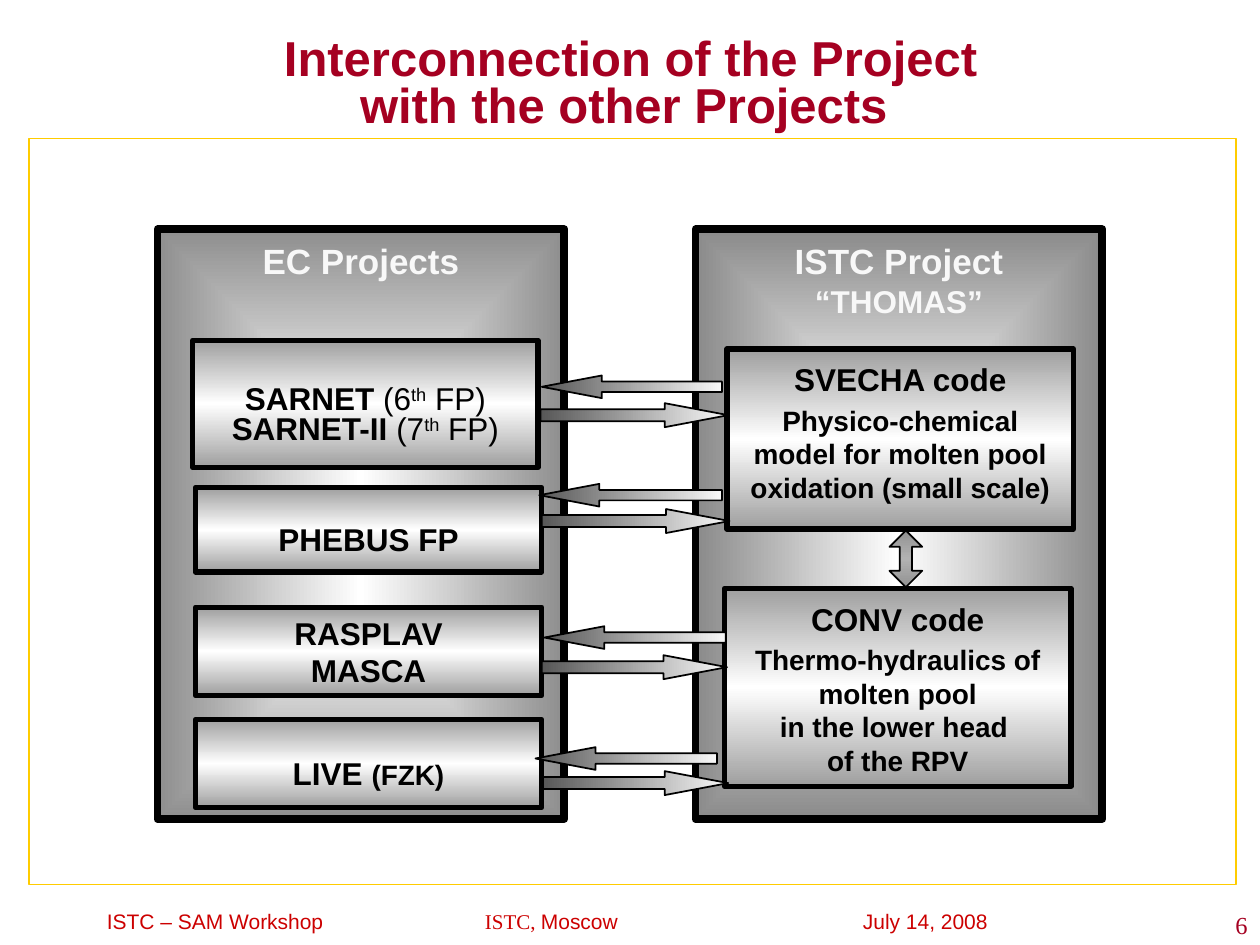
from lxml import etree
from pptx import Presentation
from pptx.dml.color import RGBColor
from pptx.enum.shapes import MSO_SHAPE
from pptx.enum.text import MSO_ANCHOR, PP_ALIGN
from pptx.oxml.ns import qn
from pptx.util import Inches, Pt

BLACK, PALE, DARK_RED, RED = "000000", "F8F8F8", "A50021", "CC0000"
BOX_SHADES = ["9F9F9F", "FFFFFF", "9F9F9F"]
TOP, MIDDLE = MSO_ANCHOR.TOP, MSO_ANCHOR.MIDDLE


def rgb(value):
    return RGBColor.from_string(value)


def add_shaded(kind, place, shades, line_width, angle=None):
    """Add an outlined shape with evenly spaced shades; no angle means from the centre out."""
    shape = slide.shapes.add_shape(kind, *map(Inches, place))
    shape.shadow.inherit = False
    shape.line.color.rgb = rgb(BLACK)
    shape.line.width = Pt(line_width)
    shape.fill.gradient()
    gradient = shape._element.spPr.find(qn("a:gradFill"))
    gradient.clear()
    gradient.set("rotWithShape", "1")
    stops = etree.SubElement(gradient, qn("a:gsLst"))
    for i, shade in enumerate(shades):
        stop = etree.SubElement(stops, qn("a:gs"), pos=str(100000 * i // (len(shades) - 1)))
        etree.SubElement(stop, qn("a:srgbClr"), val=shade)
    if angle is None:
        path = etree.SubElement(gradient, qn("a:path"), path="shape")
        etree.SubElement(path, qn("a:fillToRect"), l="50000", t="50000", r="50000", b="50000")
    else:
        etree.SubElement(gradient, qn("a:lin"), ang=str(angle * 60000), scaled="0")
    return shape


prs = Presentation()
prs.slide_width, prs.slide_height = Inches(10), Inches(7.5)
slide = prs.slides.add_slide(prs.slide_layouts[6])

border = slide.shapes.add_shape(
    MSO_SHAPE.RECTANGLE, Inches(0.23), Inches(1.1), Inches(9.58), Inches(5.92))
border.shadow.inherit = False
border.fill.solid()
border.fill.fore_color.rgb = rgb("FFFFFF")
border.line.color.rgb = rgb("FFCC00")
border.line.width = Pt(1)

# Title, footer and page number: place, runs with their fonts, size, colour, alignment
captions = [
    ((1.84, 0.21, 6.33, 0.94),
     [("Interconnection of the Project with the other Projects ", "Arial")],
     28, DARK_RED, PP_ALIGN.CENTER),
    ((0.75, 7.13, 7.62, 0.36),
     [("ISTC – SAM Workshop\t", "Arial"), ("ISTC, ", "Times New Roman"),
      ("Moscow\tJuly 14, 2008", "Arial")],
     12, RED, PP_ALIGN.LEFT),
    ((7.92, 7.18, 2.08, 0.32), [("6", "Times New Roman")], 14, DARK_RED, PP_ALIGN.RIGHT),
]
for place, runs, size, color, align in captions:
    frame = slide.shapes.add_textbox(*map(Inches, place)).text_frame
    frame.word_wrap = True
    frame.vertical_anchor = MIDDLE
    caption = frame.paragraphs[0]
    caption.alignment = align
    if align == PP_ALIGN.CENTER:
        caption.line_spacing = 0.8
    if align == PP_ALIGN.LEFT:
        tabs = etree.SubElement(caption._p.get_or_add_pPr(), qn("a:tabLst"))
        for position in (3, 6):
            etree.SubElement(tabs, qn("a:tab"), pos=str(Inches(position)), algn="l")
    caption.font.size = Pt(size)
    caption.font.color.rgb = rgb(color)
    caption.font.bold = align == PP_ALIGN.CENTER
    for text, font in runs:
        run = caption.add_run()
        run.text = text
        run.font.name = font

# The two project panels, each with its heading lines
panels = [
    (1.25, "8E8E8E", [("EC Projects", 20)]),
    (5.52, "8A8A8A", [("ISTC Project", 20), ("“THOMAS”", 18)]),
]
for left, edge, headings in panels:
    panel = add_shaded(MSO_SHAPE.RECTANGLE, (left, 1.82, 3.23, 4.68), ["FFFFFF", edge], 4.5)
    frame = panel.text_frame
    frame.word_wrap = True
    frame.vertical_anchor = TOP
    frame.margin_left = frame.margin_right = frame.margin_bottom = Inches(0.04)
    frame.margin_top = Inches(0.08)
    for i, (text, size) in enumerate(headings):
        heading = frame.add_paragraph() if i else frame.paragraphs[0]
        heading.text = text
        heading.alignment = PP_ALIGN.CENTER
        if i:
            heading.space_before = Pt(3)
            heading.line_spacing = 0.9
        heading.font.name, heading.font.size, heading.font.bold = "Arial", Pt(size), True
        heading.font.color.rgb = rgb(PALE)

# Boxes: place, anchor, top margin, then paragraphs of (text, size, bold, superscript) runs
boxes = [
    ((1.53, 2.7, 2.74, 1.01), MIDDLE, 0.29, [
        [(name, 18, True, False), (f"({number}", 18, False, False),
         ("th", 18, False, True), (" FP)", 18, False, False)]
        for name, number in (("SARNET ", 6), ("SARNET-II ", 7))]),
    ((1.55, 3.87, 2.75, 0.67), MIDDLE, 0.2, [[("PHEBUS FP", 18, True, False)]]),
    ((1.55, 4.82, 2.75, 0.7), MIDDLE, 0.05,
     [[("RASPLAV", 18, True, False)], [("MASCA", 18, True, False)]]),
    ((1.55, 5.71, 2.75, 0.7), MIDDLE, 0.2,
     [[("LIVE ", 18, True, False), ("(FZK)", 16, True, False)]]),
    ((5.77, 2.77, 2.75, 1.43), TOP, 0.09,
     [[("SVECHA code", 18, True, False)],
      [("Physico-chemical model for molten pool oxidation (small scale)", 16, True, False)]]),
    ((5.75, 4.67, 2.75, 1.57), TOP, 0.09,
     [[("CONV code", 18, True, False)],
      [("Thermo-hydraulics of molten pool", 16, True, False)],
      [("in the lower head ", 16, True, False)],
      [("of the RPV", 16, True, False)]]),
]
for place, anchor, top_margin, paragraphs in boxes:
    frame = add_shaded(MSO_SHAPE.RECTANGLE, place, BOX_SHADES, 3, 90).text_frame
    frame.word_wrap = True
    frame.vertical_anchor = anchor
    frame.margin_top = Inches(top_margin)
    for i, runs in enumerate(paragraphs):
        entry = frame.add_paragraph() if i else frame.paragraphs[0]
        entry.alignment = PP_ALIGN.CENTER
        if len(runs) == 4:
            entry.line_spacing = 0.6
            if i:
                entry.space_before = Pt(4)
        if anchor == TOP and i == 0:
            entry.space_after = Pt(3)
        entry.font.name = "Arial"
        entry.font.color.rgb = rgb(BLACK)
        for text, size, bold, superscript in runs:
            run = entry.add_run()
            run.text = text
            run.font.size, run.font.bold = Pt(size), bold
            if superscript:
                run.font._element.set("baseline", "30000")

# Exchange arrows between the panels: left, top, width
to_ec = [(4.3, 2.98, 1.43), (4.28, 3.84, 1.45), (4.32, 4.97, 1.44), (4.25, 5.93, 1.44)]
to_istc = [(4.29, 3.2, 1.49), (4.3, 4.04, 1.49), (4.3, 5.2, 1.47), (4.31, 6.12, 1.47)]
for kind, height, shaft, places in (
        (MSO_SHAPE.LEFT_ARROW, 0.18, 0.46, to_ec),
        (MSO_SHAPE.RIGHT_ARROW, 0.19, 0.5, to_istc)):
    for place in places:
        arrow = add_shaded(kind, (*place, height), ["575757", PALE], 1, 0)
        arrow.adjustments[0], arrow.adjustments[1] = shaft, 2.65

code_link = add_shaded(MSO_SHAPE.UP_DOWN_ARROW, (7.06, 4.21, 0.26, 0.45),
                       ["929292", "B2B2B2", "929292"], 1, 90)
code_link.adjustments[0], code_link.adjustments[1] = 0.45, 0.37

prs.save("out.pptx")
